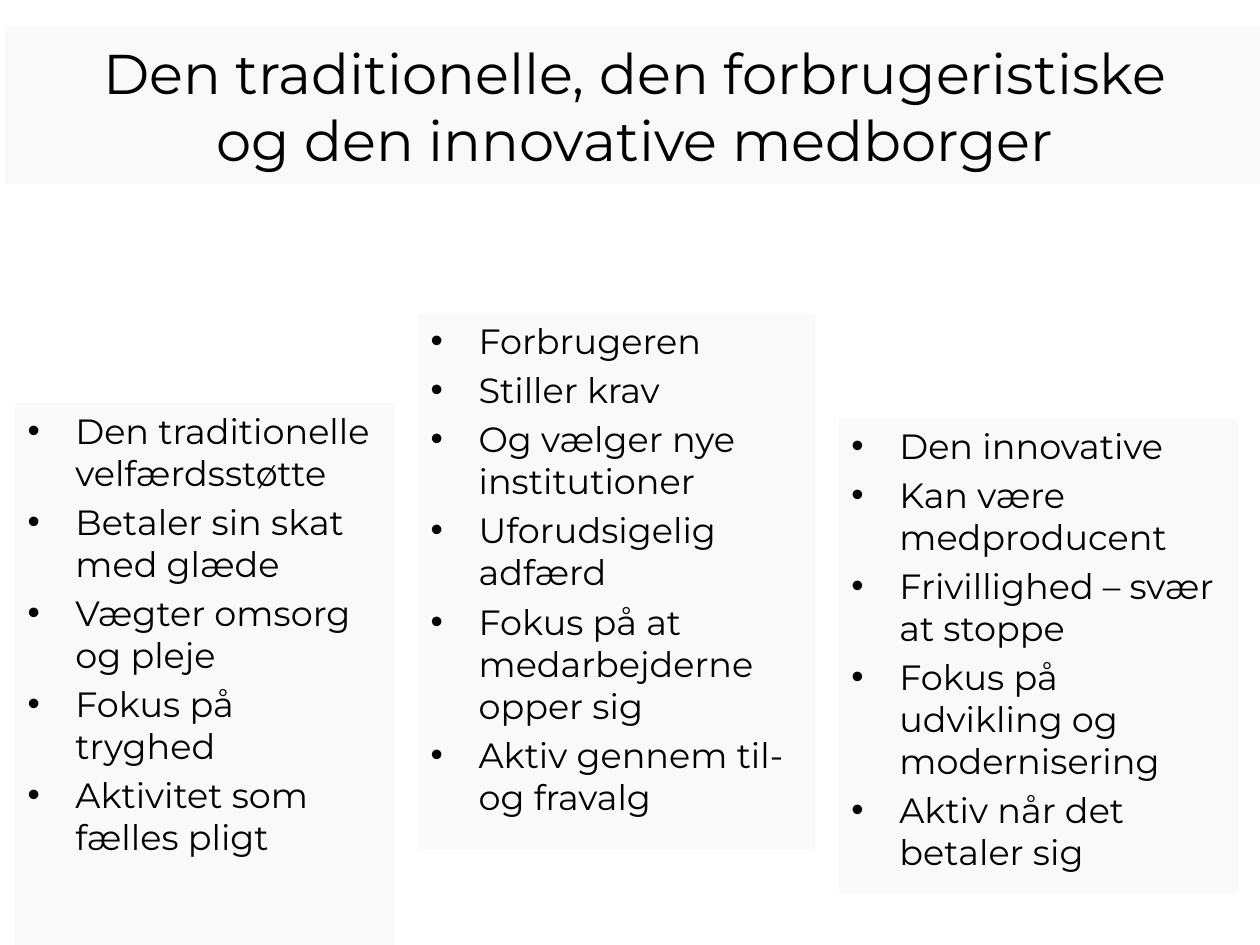
"""Build a slide comparing three kinds of citizen in staggered bullet panels."""
from lxml.etree import SubElement
from pptx import Presentation
from pptx.dml.color import RGBColor
from pptx.enum.text import MSO_ANCHOR, MSO_AUTO_SIZE, PP_ALIGN
from pptx.oxml.ns import qn
from pptx.util import Inches, Pt

COLORS = {"panel": "F8F8F8", "text": "000000"}
FONT = "Montserrat"
SLIDE_SIZE = (Inches(10), Inches(7.5))
INDENT = Inches(0.38)

TITLE = {
    "text": "Den traditionelle, den forbrugeristiske\nog den innovative medborger",
    "area": (0.4, 2.8, 100, 16.67),
    "opacity": 72,
}
PANEL_OPACITY = 82
PANELS = [
    {
        "area": (1.2, 42.67, 30.1, 57.33),
        "items": [
            "Den traditionelle velfærdsstøtte",
            "Betaler sin skat med glæde",
            "Vægter omsorg og pleje",
            "Fokus på tryghed",
            "Aktivitet som fælles pligt",
        ],
    },
    {
        "area": (33.2, 33.2, 31.5, 56.67),
        "items": [
            "Forbrugeren",
            "Stiller krav",
            "Og vælger nye institutioner",
            "Uforudsigelig adfærd",
            "Fokus på at medarbejderne opper sig",
            "Aktiv gennem til- og fravalg",
        ],
    },
    {
        "area": (66.6, 44.27, 31.7, 50.27),
        "items": [
            "Den innovative",
            "Kan være medproducent",
            "Frivillighed – svær at stoppe",
            "Fokus på udvikling og modernisering",
            "Aktiv når det betaler sig",
        ],
    },
]


def set_values(target, values):
    """Set each named attribute of the target."""
    for name, value in values.items():
        setattr(target, name, value)


def to_lengths(area):
    """Turn percentages of the slide into left, top, width and height."""
    return [round(share / 100 * SLIDE_SIZE[index % 2]) for index, share in enumerate(area)]


def style_panel(shape, opacity, anchor):
    """Give a shape the translucent panel fill and its text frame settings."""
    shape.fill.solid()
    shape.fill.fore_color.rgb = RGBColor.from_string(COLORS["panel"])
    color = shape.fill._xPr.find(qn("a:solidFill"))[0]
    SubElement(color, qn("a:alpha"), val=str(opacity * 1000))
    set_values(shape.text_frame, {
        "word_wrap": True,
        "auto_size": MSO_AUTO_SIZE.NONE,
        "vertical_anchor": anchor,
    })


def write_paragraph(paragraph, text, size, alignment):
    """Write text into a paragraph with the slide's font."""
    paragraph.text = text
    paragraph.alignment = alignment
    for run in paragraph.runs:
        set_values(run.font, {"name": FONT, "size": Pt(size)})
        run.font.color.rgb = RGBColor.from_string(COLORS["text"])


def add_bullet(paragraph):
    """Give a paragraph a hanging bullet."""
    paragraph.space_before = Pt(4)
    properties = paragraph._p.get_or_add_pPr()
    properties.set("marL", str(INDENT))
    properties.set("indent", str(-INDENT))
    SubElement(properties, qn("a:buFont"), typeface="Arial")
    SubElement(properties, qn("a:buChar"), char="•")


def add_panel(slide, panel):
    """Add one panel with its bullet list."""
    shape = slide.shapes.add_textbox(*to_lengths(panel["area"]))
    style_panel(shape, PANEL_OPACITY, MSO_ANCHOR.TOP)
    frame = shape.text_frame
    for index, item in enumerate(panel["items"]):
        paragraph = frame.add_paragraph() if index else frame.paragraphs[0]
        write_paragraph(paragraph, item, 20, PP_ALIGN.LEFT)
        add_bullet(paragraph)


def main():
    """Build and save the presentation."""
    presentation = Presentation()
    presentation.slide_width, presentation.slide_height = SLIDE_SIZE
    slide = presentation.slides.add_slide(presentation.slide_layouts.get_by_name("Title Only"))
    title = slide.shapes.title
    set_values(title, dict(zip(("left", "top", "width", "height"), to_lengths(TITLE["area"]))))
    style_panel(title, TITLE["opacity"], MSO_ANCHOR.MIDDLE)
    write_paragraph(title.text_frame.paragraphs[0], TITLE["text"], 32, PP_ALIGN.CENTER)
    for panel in PANELS:
        add_panel(slide, panel)
    presentation.save("out.pptx")


if __name__ == "__main__":
    main()
